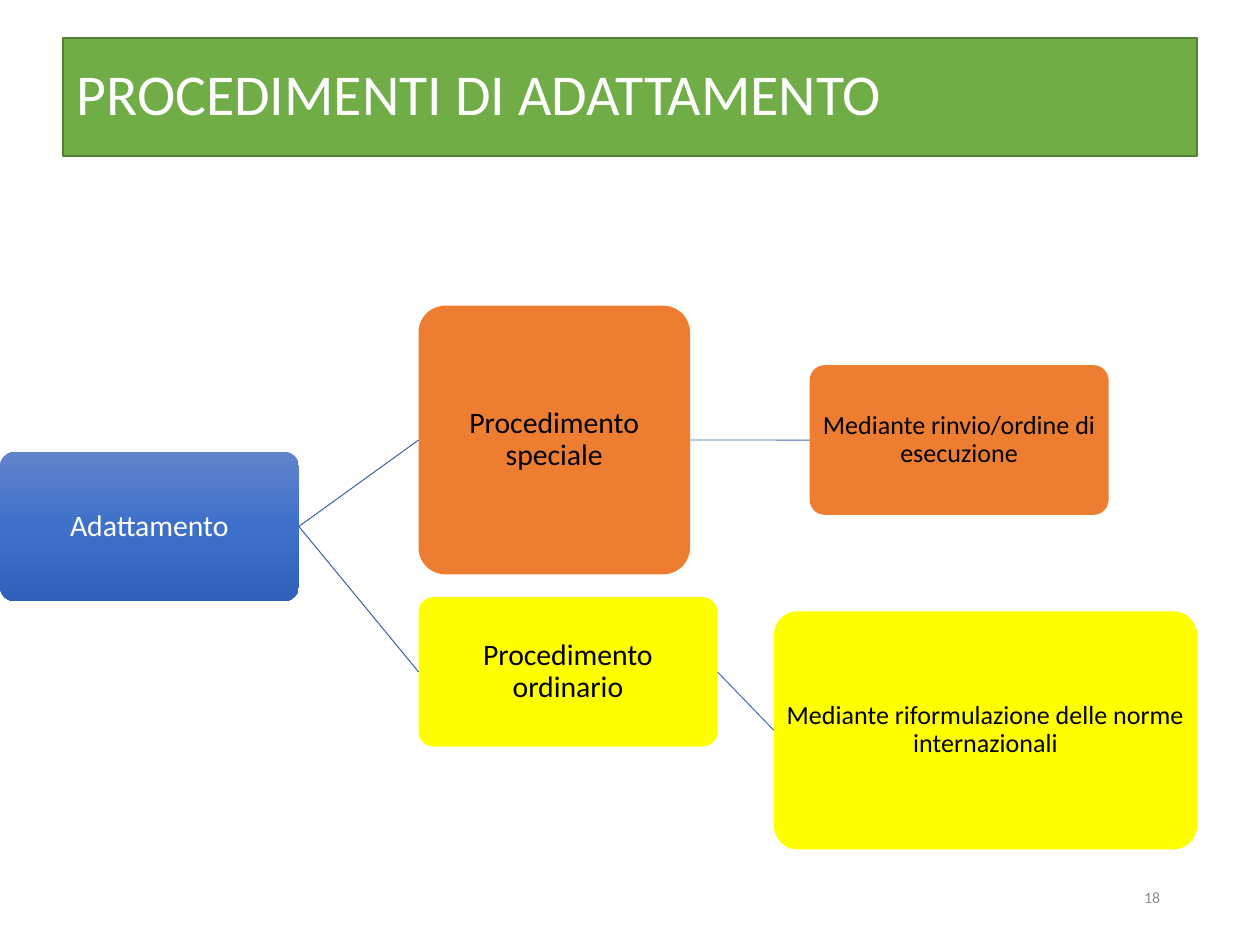
from copy import deepcopy
from typing import NamedTuple

from lxml import etree
from pptx import Presentation
from pptx.dml.color import RGBColor
from pptx.enum import shapes, text
from pptx.oxml.ns import qn
from pptx.util import Cm, Pt

INCH = 2.54  # centimetres
WIDTH, HEIGHT = Cm(9.41 * INCH), Cm(7.03 * INCH)
HUES = {
    "green": "70AD47", "rim": "538035", "orange": "ED7D31", "yellow": "FFFF00",
    "white": "FFFFFF", "black": "000000", "gray": "8C8C8C",
    "high": "6183CB", "mid": "3E70CA", "low": "3062BB",
    "stem": "365B9D", "twig": "3E67B2",
}
LEFT, RIGHT = 1, 3  # connection sites of a rounded box


class Node(NamedTuple):
    label: str
    box: tuple[float, float, float, float]
    fill: str
    size: float
    ink: str = "black"


class Link(NamedTuple):
    start: str
    end: str
    hue: str


NODES = {
    "root": Node("Adattamento", (0, 8.57, 5.67, 2.84), "mid", 16, "white"),
    "special": Node("Procedimento speciale", (7.94, 5.8, 5.15, 5.1), "orange", 16),
    "order": Node("Mediante rinvio/ordine di esecuzione",
                  (15.36, 6.93, 5.67, 2.84), "orange", 14),
    "plain": Node("Procedimento ordinario", (7.94, 11.33, 5.67, 2.84), "yellow", 16),
    "recast": Node("Mediante riformulazione delle norme internazionali",
                   (14.68, 11.6, 8.03, 4.52), "yellow", 14),
}
LINKS = [
    Link("root", "special", "stem"),
    Link("root", "plain", "stem"),
    Link("special", "order", "twig"),
    Link("plain", "recast", "twig"),
]


def color(name: str) -> RGBColor:
    return RGBColor.from_string(HUES[name])


def write(shape, words: str, size: float, ink: str, align, lead: float = 0.9) -> None:
    frame = shape.text_frame
    frame.word_wrap = True
    frame.vertical_anchor = text.MSO_ANCHOR.MIDDLE
    para = frame.paragraphs[0]
    para.text = words
    para.alignment = align
    para.line_spacing = lead
    para.font.name = "Calibri"
    para.font.size = Pt(size)
    para.font.color.rgb = color(ink)


def shade(shape, names: list[str]) -> None:
    """Fill from top to bottom with three evenly spaced colours."""
    fill = shape.fill
    fill.gradient()
    fill.gradient_angle = 270
    first = shape.element.find(".//" + qn("a:gs"))
    first.addnext(deepcopy(first))
    for i, (stop, name) in enumerate(zip(fill.gradient_stops, names)):
        stop.position = i / 2
        stop.color.rgb = color(name)


def draw_node(slide, node: Node):
    shape = slide.shapes.add_shape(
        shapes.MSO_SHAPE.ROUNDED_RECTANGLE, *map(Cm, node.box))
    shape.adjustments[0] = 0.1
    shape.shadow.inherit = False
    shape.line.fill.background()
    shape.fill.solid()
    shape.fill.fore_color.rgb = color(node.fill)
    frame = shape.text_frame
    frame.margin_left = frame.margin_right = Cm(0.1)
    frame.margin_top = frame.margin_bottom = Cm(0.1)
    write(shape, node.label, node.size, node.ink, text.PP_ALIGN.CENTER)
    return shape


def draw_link(slide, link: Link, drawn: dict) -> None:
    line = slide.shapes.add_connector(shapes.MSO_CONNECTOR.STRAIGHT, 0, 0, 0, 0)
    line.begin_connect(drawn[link.start], RIGHT)
    line.end_connect(drawn[link.end], LEFT)
    line.line.color.rgb = color(link.hue)
    line.line.width = Pt(0.5)
    etree.SubElement(line.element.spPr, qn("a:effectLst"))


def draw_title(slide) -> None:
    bar = slide.shapes.add_shape(
        shapes.MSO_SHAPE.RECTANGLE, Cm(1.2), Cm(0.72), Cm(21.51), Cm(2.25))
    bar.shadow.inherit = False
    bar.fill.solid()
    bar.fill.fore_color.rgb = color("green")
    bar.line.color.rgb = color("rim")
    bar.line.width = Pt(1)
    write(bar, "PROCEDIMENTI DI ADATTAMENTO", 31.1, "white", text.PP_ALIGN.JUSTIFY)


def main() -> None:
    deck = Presentation()
    deck.slide_width, deck.slide_height = WIDTH, HEIGHT
    slide = deck.slides.add_slide(deck.slide_layouts[6])
    draw_title(slide)
    drawn = {key: draw_node(slide, node) for key, node in NODES.items()}
    shade(drawn["root"], ["high", "mid", "low"])
    for link in LINKS:
        draw_link(slide, link, drawn)
    page = slide.shapes.add_textbox(Cm(16.88), Cm(16.55), Cm(5.38), Cm(0.94))
    write(page, "18", 8.5, "gray", text.PP_ALIGN.RIGHT, 1.0)
    deck.save("out.pptx")


if __name__ == "__main__":
    main()
